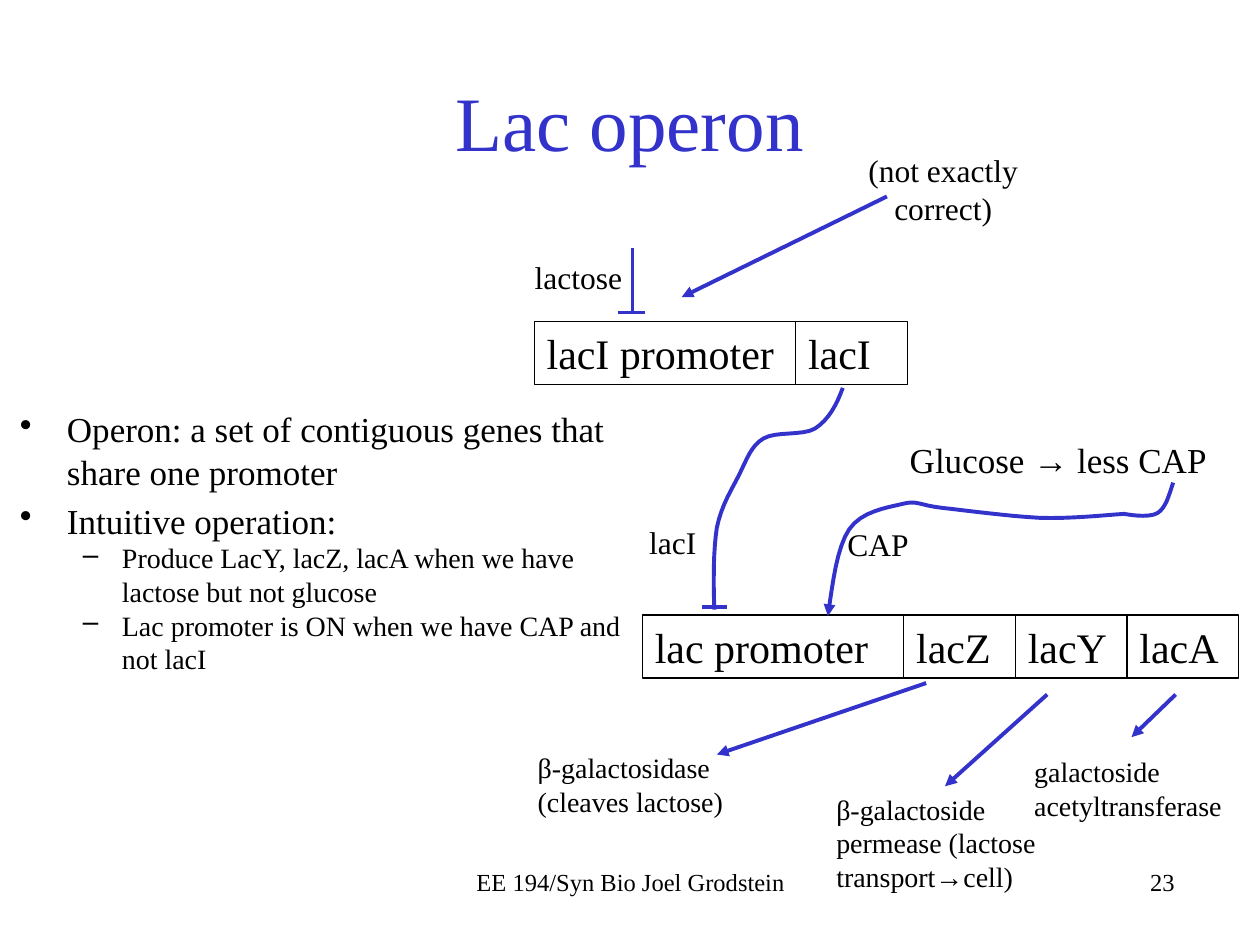
import pptx
import pptx.dml.color
import pptx.enum.shapes
import pptx.enum.text
import pptx.oxml.ns
import pptx.util
from lxml import etree

Cm = pptx.util.Cm
Pt = pptx.util.Pt
qn = pptx.oxml.ns.qn
ALIGN = pptx.enum.text.PP_ALIGN
LEFT, CENTER, RIGHT = ALIGN.LEFT, ALIGN.CENTER, ALIGN.RIGHT
BLACK = pptx.dml.color.RGBColor(0x00, 0x00, 0x00)
BLUE = pptx.dml.color.RGBColor(0x33, 0x33, 0xCC)


def write(frame, lines, size, align=LEFT, color=BLACK):
    frame.word_wrap = True
    frame.text = lines
    for paragraph in frame.paragraphs:
        paragraph.alignment = align
        for run in paragraph.runs:
            run.font.name = "Times New Roman"
            run.font.size = Pt(size)
            run.font.color.rgb = color


def draw_stroke(stroke, width, arrow):
    stroke.line.color.rgb = BLUE
    stroke.line.width = Pt(width)
    properties = stroke._element.spPr
    if arrow:
        etree.SubElement(properties.find(qn("a:ln")), qn("a:tailEnd"), type="triangle")
    if properties.find(qn("a:effectLst")) is None:
        etree.SubElement(properties, qn("a:effectLst"))


deck = pptx.Presentation()
deck.slide_width, deck.slide_height = Cm(25.4), Cm(19.05)
slide = deck.slides.add_slide(deck.slide_layouts[6])
shapes = slide.shapes

title = shapes.add_textbox(Cm(1.9), Cm(0.84), Cm(21.59), Cm(3.18)).text_frame
title.vertical_anchor = pptx.enum.text.MSO_ANCHOR.MIDDLE
write(title, "Lac operon", 44, CENTER, BLUE)

points = [
    (0, "Operon: a set of contiguous genes that share one promoter"),
    (0, "Intuitive operation:"),
    (1, "Produce LacY, lacZ, lacA when we have lactose but not glucose"),
    (1, "Lac promoter is ON when we have CAP and not lacI"),
]
levels = [(20, 4, 0.95, 0.95, "•"), (16, 0, 2.06, 0.79, "–")]
summary = shapes.add_textbox(Cm(0.15), Cm(8.1), Cm(12.75), Cm(5.64)).text_frame
write(summary, "\n".join(sentence for _, sentence in points), 20)
for paragraph, (level, _) in zip(summary.paragraphs, points):
    size, before, margin, hanging, bullet = levels[level]
    paragraph.level = level
    paragraph.space_before = Pt(before)
    paragraph.runs[0].font.size = Pt(size)
    settings = paragraph._p.get_or_add_pPr()
    settings.set("marL", str(Cm(margin)))
    settings.set("indent", str(-Cm(hanging)))
    etree.SubElement(settings, qn("a:buChar"), char=bullet)

labels = [
    (15.88, 17.35, 8.05, 1.27, "23", 14, RIGHT),
    (8.69, 17.35, 8.05, 1.27, "EE 194/Syn Bio Joel Grodstein", 14, CENTER),
    (17.73, 8.71, 7.21, 1.12, "Glucose → less CAP", 20, CENTER),
    (10.59, 15.01, 4.37, 1.63, "β-galactosidase (cleaves lactose)", 16, LEFT),
    (16.61, 15.85, 4.88, 2.31, "β-galactoside permease (lactose transport→cell)", 16, LEFT),
    (20.6, 15.09, 4.5, 1.63, "galactoside acetyltransferase", 16, LEFT),
    (16.97, 2.92, 4.09, 1.8, "(not exactly correct)", 18, CENTER),
    (16.61, 10.46, 2.18, 1.02, "CAP", 18, CENTER),
    (12.65, 10.41, 1.83, 1.02, "lacI", 18, CENTER),
    (10.21, 5.08, 2.9, 1.02, "lactose", 18, CENTER),
]
for left, top, width, height, wording, size, align in labels:
    label = shapes.add_textbox(Cm(left), Cm(top), Cm(width), Cm(height))
    write(label.text_frame, wording, size, align)

operons = [
    (12.95, 12.4, ["lac promoter", "lacZ", "lacY", "lacA"]),
    (10.77, 6.48, ["lacI promoter", "lacI"]),
]
for left, top, parts in operons:
    for index, part in enumerate(parts):
        width = 2.25 if index else 5.27
        gene = shapes.add_shape(pptx.enum.shapes.MSO_SHAPE.RECTANGLE,
                                Cm(left), Cm(top), Cm(width), Cm(1.27))
        gene.shadow.inherit = False
        gene.fill.background()
        gene.line.color.rgb = BLACK
        gene.line.width = Pt(0.75)
        write(gene.text_frame, part, 24)
        left += width

links = [
    (23.7, 14, 22.81, 14.86, True),
    (21.11, 14, 19.05, 15.85, True),
    (18.67, 13.77, 14.45, 15.21, True),
    (17.88, 3.96, 13.74, 5.99, True),
    (14.15, 12.24, 14.66, 12.24, False),
    (12.75, 5, 12.75, 6.3, False),
    (12.45, 6.3, 13, 6.3, False),
]
for x1, y1, x2, y2, arrow in links:
    link = shapes.add_connector(pptx.enum.shapes.MSO_CONNECTOR.STRAIGHT,
                                Cm(x1), Cm(y1), Cm(x2), Cm(y2))
    draw_stroke(link, 2.25, arrow)

cap_path = [
    (23.65, 9.73), (23.57, 9.98), (23.5, 10.24), (23.34, 10.34),
    (23.16, 10.46), (22.66, 10.36), (22.66, 10.36),
    (22.25, 10.39), (21.56, 10.46), (20.96, 10.44),
    (20.35, 10.41), (19.46, 10.29), (19, 10.24),
    (18.54, 10.19), (18.49, 10.08), (18.19, 10.16),
    (17.86, 10.24), (17.37, 10.31), (17.12, 10.67),
    (16.87, 11.05), (16.79, 11.73), (16.69, 12.42),
]
repressor_path = [
    (16.99, 7.82), (16.87, 8.15), (16.71, 8.46), (16.43, 8.64),
    (16.18, 8.79), (15.65, 8.69), (15.39, 8.84),
    (15.14, 8.99), (15.06, 9.25), (14.91, 9.55),
    (14.76, 9.86), (14.55, 10.16), (14.45, 10.64),
    (14.38, 11.1), (14.38, 11.68), (14.4, 12.29),
]
STEPS = 8
for controls, arrow in [(cap_path, True), (repressor_path, False)]:
    trace = []
    for start in range(0, len(controls) - 1, 3):
        for step in range(1, STEPS + 1):
            t = step / STEPS
            weights = [(1 - t) ** 3, 3 * t * (1 - t) ** 2, 3 * t ** 2 * (1 - t), t ** 3]
            corners = controls[start:start + 4]
            trace.append(tuple(Cm(sum(w * c[axis] for w, c in zip(weights, corners)))
                               for axis in (0, 1)))
    builder = shapes.build_freeform(Cm(controls[0][0]), Cm(controls[0][1]))
    builder.add_line_segments(trace, close=False)
    curve = builder.convert_to_shape()
    curve.shadow.inherit = False
    curve.fill.background()
    draw_stroke(curve, 2.25, arrow)

deck.save("out.pptx")
